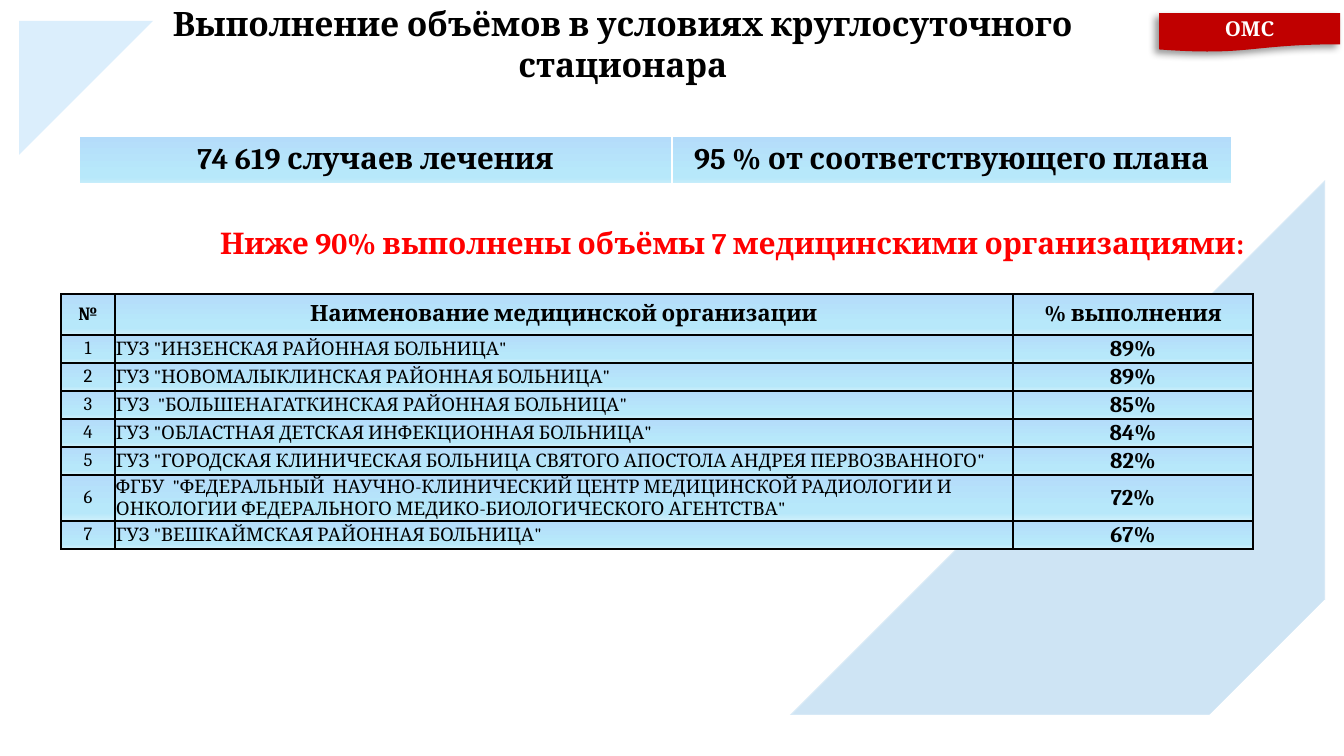
from lxml import etree
from pptx import Presentation
from pptx.dml.color import RGBColor
from pptx.enum.shapes import MSO_SHAPE
from pptx.enum.text import MSO_ANCHOR, PP_ALIGN
from pptx.oxml.ns import qn
from pptx.util import Pt

LEFT, CENTER = PP_ALIGN.LEFT, PP_ALIGN.CENTER
TOP, MIDDLE, BOTTOM = MSO_ANCHOR.TOP, MSO_ANCHOR.MIDDLE, MSO_ANCHOR.BOTTOM
TRIANGLE, BADGE = MSO_SHAPE.RIGHT_TRIANGLE, MSO_SHAPE.FLOWCHART_DOCUMENT
FONT = "Cambria"
SCALE = 914400 / 134.4
COLORS = {"black": "000000", "white": "FFFFFF", "red": "FF0000",
          "badge": "C00000", "blue": "0D79CA", "sky": "4FADF3"}
STOPS = [(0, "B4DCFA"), (74, "B7E8FA"), (83, "B7E8FA"), (100, "CFF0FB")]

TITLE = "Выполнение объёмов в условиях круглосуточного стационара"
WARNING = "Ниже 90% выполнены объёмы 7 медицинскими организациями:"
TOTALS = ["74 619 случаев лечения", "95 % от соответствующего плана"]
HEADS = ["№", "Наименование медицинской организации", "% выполнения"]
CLINICS = [
    ('ГУЗ "ИНЗЕНСКАЯ РАЙОННАЯ БОЛЬНИЦА"', 89),
    ('ГУЗ "НОВОМАЛЫКЛИНСКАЯ РАЙОННАЯ БОЛЬНИЦА"', 89),
    ('ГУЗ  "БОЛЬШЕНАГАТКИНСКАЯ РАЙОННАЯ БОЛЬНИЦА"', 85),
    ('ГУЗ "ОБЛАСТНАЯ ДЕТСКАЯ ИНФЕКЦИОННАЯ БОЛЬНИЦА"', 84),
    ('ГУЗ "ГОРОДСКАЯ КЛИНИЧЕСКАЯ БОЛЬНИЦА СВЯТОГО АПОСТОЛА АНДРЕЯ ПЕРВОЗВАННОГО"', 82),
    ('ФГБУ  "ФЕДЕРАЛЬНЫЙ  НАУЧНО-КЛИНИЧЕСКИЙ ЦЕНТР МЕДИЦИНСКОЙ РАДИОЛОГИИ И '
     'ОНКОЛОГИИ ФЕДЕРАЛЬНОГО МЕДИКО-БИОЛОГИЧЕСКОГО АГЕНТСТВА"', 72),
    ('ГУЗ "ВЕШКАЙМСКАЯ РАЙОННАЯ БОЛЬНИЦА"', 67),
]
# place, rotation, fill, opacity in %, has a white outline
TRIANGLES = [
    ((790, 180, 535, 535), 270, "blue", 20, True),
    ((1191, 601, 134, 134), 270, "white", 100, True),
    ((19, 21, 134, 134), 90, "sky", 20, False),
]


def px(n):
    return round(n * SCALE)


def rgb(name):
    return RGBColor.from_string(COLORS[name])


def sub(parent, tag, **attrs):
    return etree.SubElement(parent, qn(tag), {k: str(v) for k, v in attrs.items()})


def fade(fill, alpha):
    for color in fill._xPr.iter(qn("a:srgbClr")):
        sub(color, "a:alpha", val=alpha * 1000)


def write(frame, text, size, color="black", bold=True, align=CENTER):
    frame.text = text
    para = frame.paragraphs[0]
    para.alignment = align
    font = para.runs[0].font
    font.name, font.size, font.bold = FONT, Pt(size), bold
    font.color.rgb = rgb(color)


def inset(item, sides):
    (item.margin_left, item.margin_top,
     item.margin_right, item.margin_bottom) = map(px, sides)


def add_text(slide, box, sides, anchor, *style, **more):
    frame = slide.shapes.add_textbox(*map(px, box)).text_frame
    frame.word_wrap = True
    frame.vertical_anchor = anchor
    inset(frame, sides)
    write(frame, *style, **more)


def paint(cell, edges):
    """Give a cell its borders and its vertical gradient."""
    props = cell._tc.get_or_add_tcPr()
    for tag, (color, width) in edges.items():
        line = sub(props, "a:" + tag, w=Pt(width))
        sub(sub(line, "a:solidFill"), "a:srgbClr", val=COLORS[color])
    grad = sub(props, "a:gradFill", rotWithShape=1)
    stops = sub(grad, "a:gsLst")
    for pos, color in STOPS:
        sub(sub(stops, "a:gs", pos=pos * 1000), "a:srgbClr", val=color)
    sub(grad, "a:lin", ang=90 * 60000, scaled=0)


def add_grid(slide, left, top, cols, rows, edges):
    shape = slide.shapes.add_table(len(rows), len(cols), px(left), px(top),
                                   px(sum(cols)), px(sum(rows)))
    table = shape.table
    table.first_row = table.horz_banding = False
    for col, width in zip(table.columns, cols):
        col.width = px(width)
    for row, height in zip(table.rows, rows):
        row.height = px(height)
    for cell in table.iter_cells():
        paint(cell, edges)
    return table


def add_badge(slide):
    badge = slide.shapes.add_shape(BADGE, *map(px, (1159, 13, 181, 39)))
    badge.fill.solid()
    badge.fill.fore_color.rgb = rgb("badge")
    badge.line.fill.background()
    badge.shadow.inherit = False
    effects = badge._element.spPr.find(qn("a:effectLst"))
    shadow = sub(effects, "a:outerShdw", blurRad=Pt(4), dist=Pt(3),
                 dir=135 * 60000, algn="tr", rotWithShape=0)
    sub(sub(shadow, "a:srgbClr", val=COLORS["black"]), "a:alpha", val=40000)
    badge.text_frame.vertical_anchor = MIDDLE
    inset(badge.text_frame, (9, 4, 9, 4))
    write(badge.text_frame, "ОМС", 11, "white")


def main():
    deck = Presentation()
    deck.slide_width, deck.slide_height = px(1344), px(756)
    slide = deck.slides.add_slide(deck.slide_layouts[6])

    for box, turn, color, alpha, outlined in TRIANGLES:
        shape = slide.shapes.add_shape(TRIANGLE, *map(px, box))
        shape.rotation = turn
        shape.shadow.inherit = False
        shape.fill.solid()
        shape.fill.fore_color.rgb = rgb(color)
        if outlined:
            shape.line.color.rgb = rgb("white")
            shape.line.width = Pt(1.25)
        else:
            shape.line.fill.background()
        if alpha < 100:
            fade(shape.fill, alpha)

    add_text(slide, (132, 19, 982, 113), (0, 0, 0, 48), BOTTOM, TITLE, 18)

    thin = ("white", 1)
    edges = {"lnL": thin, "lnR": thin, "lnT": thin, "lnB": ("white", 3)}
    totals = add_grid(slide, 79, 136, [593, 560], [50], edges)
    for cell, text in zip(totals.iter_cells(), TOTALS):
        write(cell.text_frame, text, 16)

    add_text(slide, (207, 218, 1160, 50), (13, 7, 13, 7), TOP,
             WARNING, 16, "red", align=LEFT)
    add_badge(slide)

    edges = dict.fromkeys(("lnL", "lnR", "lnT", "lnB"), ("black", 1))
    heights = [41] + [46 if len(name) > 80 else 28 for name, _ in CLINICS]
    grid = add_grid(slide, 61, 294, [54, 898, 240], heights, edges)
    wide, tight = (9, 0, 9, 0), (1, 1, 1, 0)
    lines = [[(text, size, True, CENTER, wide)
              for text, size in zip(HEADS, (10, 12, 12))]]
    for num, (name, share) in enumerate(CLINICS, 1):
        lines.append([(str(num), 10, False, CENTER, wide),
                      (name, 10, False, LEFT, tight),
                      (f"{share}%", 12, True, CENTER, tight)])
    for row, line in zip(grid.rows, lines):
        for cell, (text, size, bold, align, sides) in zip(row.cells, line):
            cell.vertical_anchor = MIDDLE
            inset(cell, sides)
            write(cell.text_frame, text, size, bold=bold, align=align)

    deck.save("out.pptx")


if __name__ == "__main__":
    main()
